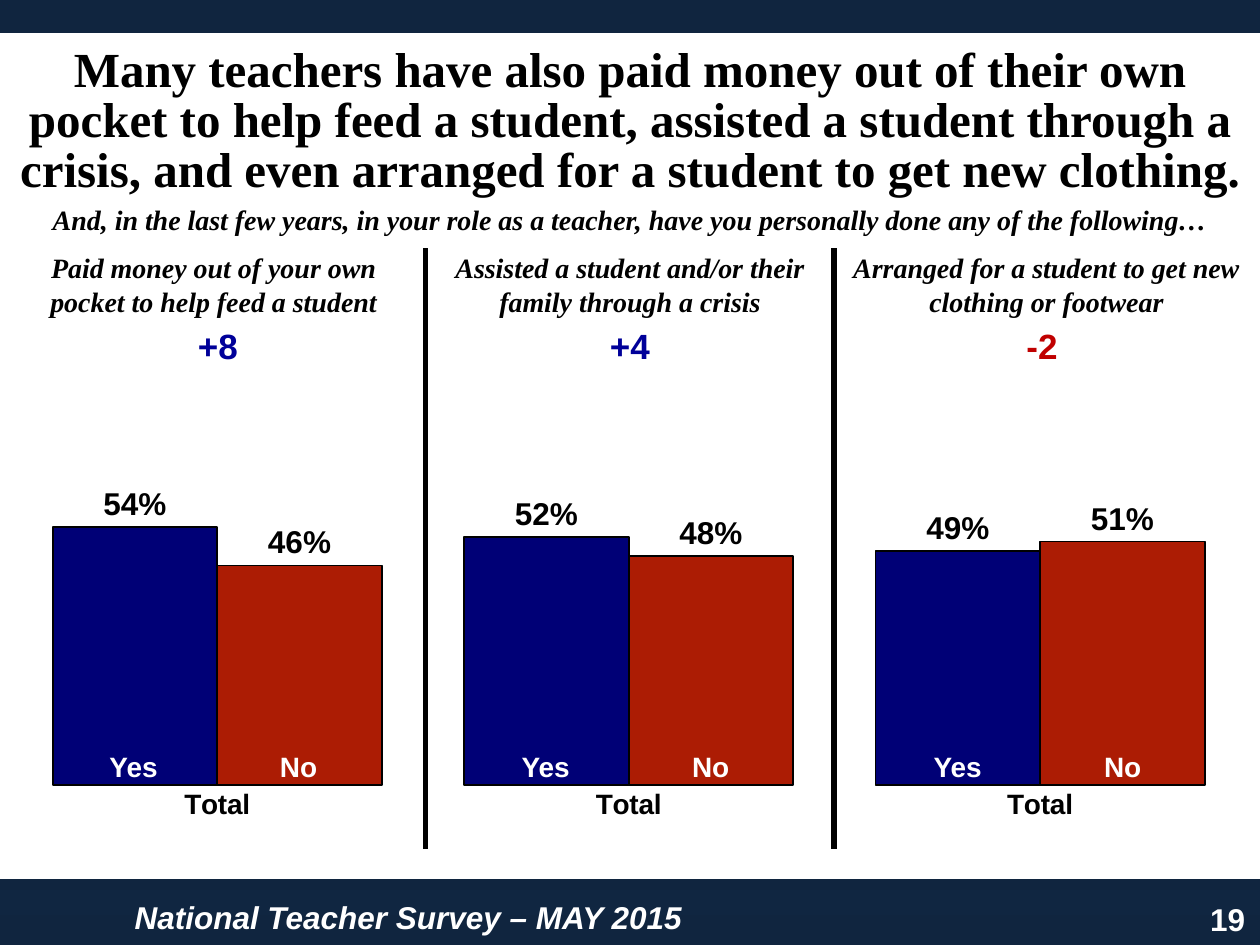
"""Build the slide on what teachers have done for their students."""
from copy import deepcopy

from lxml.etree import SubElement
from pptx import Presentation
from pptx.chart.data import CategoryChartData
from pptx.dml.color import RGBColor
from pptx.enum.chart import XL_CHART_TYPE, XL_LABEL_POSITION, XL_TICK_LABEL_POSITION, XL_TICK_MARK
from pptx.enum.shapes import MSO_CONNECTOR, MSO_SHAPE
from pptx.enum.text import MSO_AUTO_SIZE, PP_ALIGN
from pptx.oxml.ns import qn
from pptx.util import Inches, Pt

SERIF, SANS = "Times New Roman", "Arial"
NAVY, WHITE, BLACK = "10253F", "FFFFFF", "000000"
TITLE = ("Many teachers have also paid money out of their own pocket to help feed a student, "
         "assisted a student through a crisis, and even arranged for a student to get new clothing.")
QUESTION = ("And, in the last few years, in your role as a teacher, "
            "have you personally done any of the following…")
FOOTER, PAGE = "National Teacher Survey – MAY 2015", "19"
PANELS = [
    ("Paid money out of your own pocket to help feed a student", "+8", "000099"),
    ("Assisted a student and/or their family through a crisis", "+4", "000099"),
    ("Arranged for a student to get new clothing or footwear", "-2", "C00000"),
]
SERIES = [
    ("Series 1", "Yes", "000076", (0.54, 0.52, 0.49)),
    ("Series 2", "No", "AC1C04", (0.46, 0.48, 0.51)),
]
PLOT = {"x": 0.015, "y": 0.336, "w": 0.969, "h": 0.545}
PANEL_STEP, BAR_W = 3.27, 1.31


def rgb(value):
    return RGBColor.from_string(value)


def style(font, size, color=BLACK, name=SANS, italic=False):
    font.size, font.name, font.bold, font.italic = Pt(size), name, True, italic
    font.color.rgb = rgb(color)


def add_text(s, text, box, size, color=BLACK, name=SANS, italic=False,
             align=PP_ALIGN.CENTER, spacing=None):
    tf = s.shapes.add_textbox(*map(Inches, box)).text_frame
    tf.word_wrap = True
    tf.auto_size = MSO_AUTO_SIZE.SHAPE_TO_FIT_TEXT
    tf.text = text
    p = tf.paragraphs[0]
    p.alignment, p.line_spacing = align, spacing
    style(p.runs[0].font, size, color, name, italic)


def add_background(s):
    fill = s.background.fill
    fill.gradient()
    fill.gradient_angle = 90
    for stop in fill.gradient_stops:
        stop.color.rgb = rgb(NAVY)
    first = s.element.find(".//" + qn("a:gs"))
    first.addnext(deepcopy(first))
    middle = fill.gradient_stops[1]
    middle.position, middle.color.rgb = 0.5, rgb("17375E")
    sp = s.shapes.add_shape(MSO_SHAPE.RECTANGLE, *map(Inches, (-0.1, 0.22, 10.19, 6.8)))
    sp.shadow.inherit = False
    sp.fill.solid()
    sp.fill.fore_color.rgb = rgb(WHITE)
    sp.line.color.rgb, sp.line.width = rgb(NAVY), Pt(6)


def add_bars(s):
    data = CategoryChartData(number_format="0%")
    data.categories = ["Total"] * len(PANELS)
    for name, _, _, values in SERIES:
        data.add_series(name, values)
    box = map(Inches, (-0.06, -0.2, 10.11, 7.3))
    chart = s.shapes.add_chart(XL_CHART_TYPE.COLUMN_CLUSTERED, *box, data).chart
    chart.has_legend = chart.has_title = False
    chart.font.size, chart.font.name = Pt(18), SANS
    chart.font.color.rgb = rgb(BLACK)

    for axis in (chart.category_axis, chart.value_axis):
        axis.major_tick_mark = axis.minor_tick_mark = XL_TICK_MARK.NONE
        axis.has_major_gridlines = False
        axis.format.line.fill.background()
    style(chart.category_axis.tick_labels.font, 16)
    axis = chart.value_axis
    axis.tick_label_position = XL_TICK_LABEL_POSITION.NONE
    axis.minimum_scale, axis.maximum_scale, axis.major_unit = 0, 1.05, 0.1

    plot = chart.plots[0]
    plot.gap_width, plot.overlap, plot.vary_by_categories = 50, 0, False
    for series, (_, _, color, _) in zip(plot.series, SERIES):
        series.format.fill.solid()
        series.format.fill.fore_color.rgb = rgb(color)
        series.format.line.color.rgb, series.format.line.width = rgb(BLACK), Pt(1)
        labels = series.data_labels
        labels.show_value, labels.position = True, XL_LABEL_POSITION.OUTSIDE_END
        labels.number_format, labels.number_format_is_linked = "0%", False
        style(labels.font, 18)

    area = chart.element.find(".//" + qn("c:plotArea"))
    for old in area.findall(qn("c:layout")):
        area.remove(old)
    layout = area.makeelement(qn("c:layout"))
    area.insert(0, layout)
    manual = SubElement(layout, qn("c:manualLayout"))
    settings = {"layoutTarget": "inner", "xMode": "edge", "yMode": "edge", **PLOT}
    for tag, value in settings.items():
        SubElement(manual, qn("c:" + tag)).set("val", str(value))


def add_divider(s, x):
    line = s.shapes.add_connector(MSO_CONNECTOR.STRAIGHT, *map(Inches, (x, 1.97, x, 6.74)))
    line.line.color.rgb, line.line.width = rgb(BLACK), Pt(3)
    SubElement(line.element.spPr, qn("a:effectLst"))


def main():
    prs = Presentation()
    prs.slide_width, prs.slide_height = Inches(10), Inches(7.5)
    s = prs.slides.add_slide(prs.slide_layouts[6])
    add_background(s)
    add_text(s, PAGE, (8.98, 7.09, 1, 0.4), 18, WHITE, align=PP_ALIGN.RIGHT)
    add_text(s, FOOTER, (0.97, 7.08, 7.81, 0.4), 18, WHITE, italic=True, align=PP_ALIGN.LEFT)
    add_bars(s)
    add_text(s, QUESTION, (0, 1.56, 10, 0.37), 16, name=SERIF, italic=True)
    for i, (action, margin, color) in enumerate(PANELS):
        left = i * PANEL_STEP
        add_text(s, action, (i * 3.305, 1.94, 3.39, 0.64), 16, name=SERIF, italic=True)
        add_text(s, margin, (1.06 + left, 2.53, 1.34, 0.44), 20, color)
        for j, (_, answer, _, _) in enumerate(SERIES):
            add_text(s, answer, (0.4 + left + j * BAR_W, 5.9, 1.32, 0.37), 16, WHITE)
    for x in (3.38, 6.62):
        add_divider(s, x)
    add_text(s, TITLE, (0, 0.33, 10, 1.3), 28, name=SERIF, spacing=0.85)
    prs.save("out.pptx")


if __name__ == "__main__":
    main()
